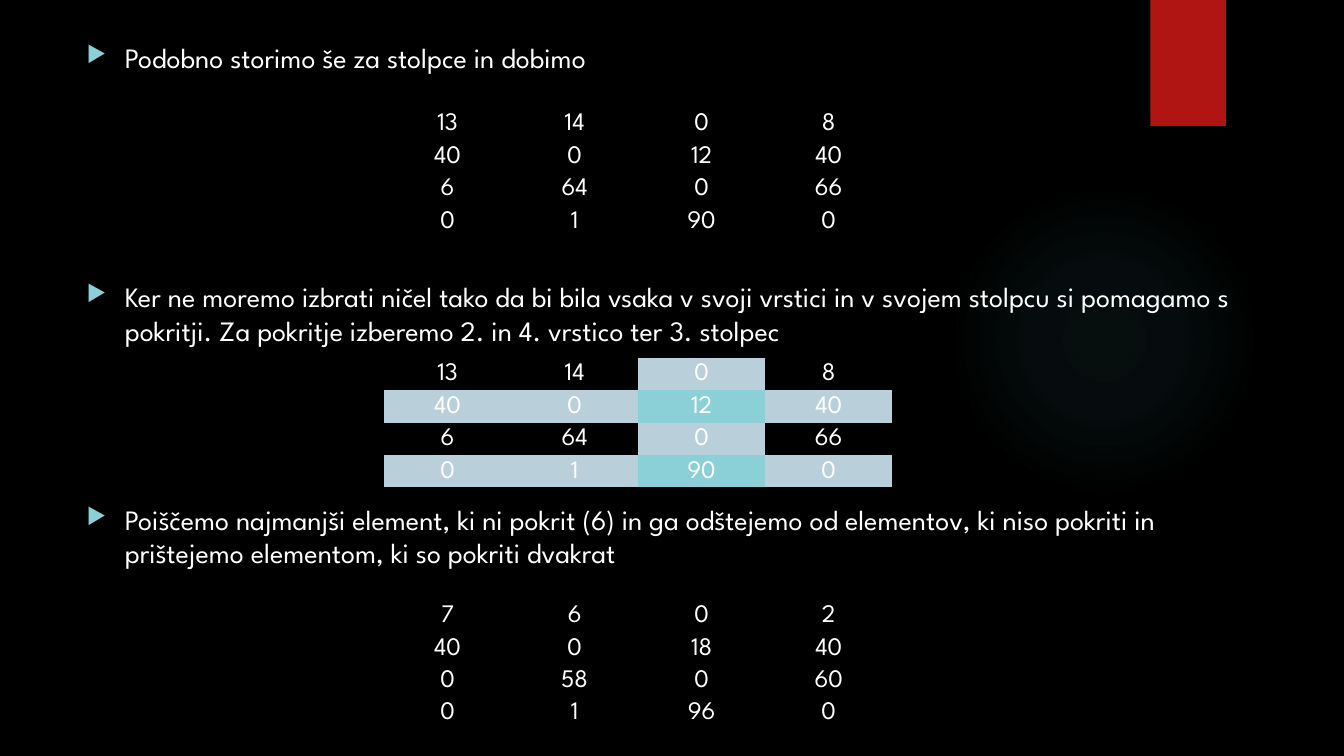
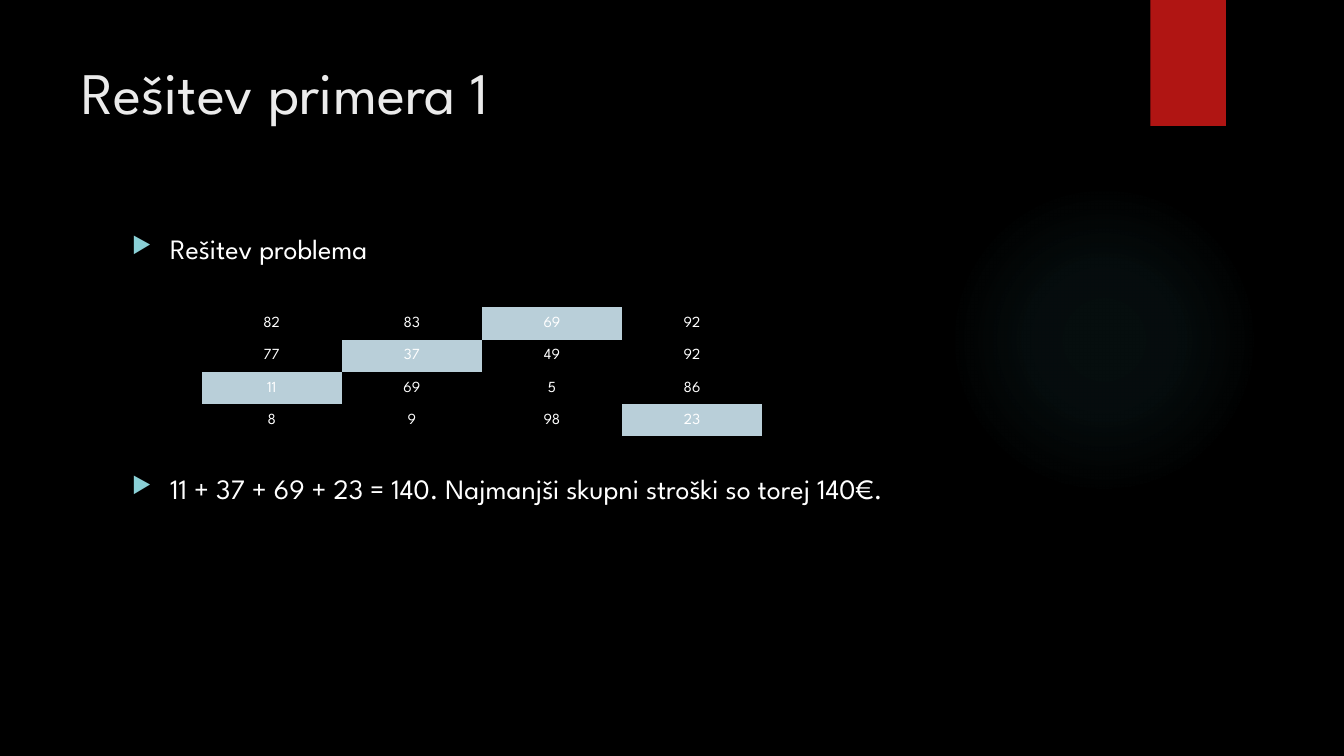
from dataclasses import dataclass

from lxml.etree import SubElement
from pptx import Presentation
from pptx.dml.color import RGBColor
from pptx.enum.shapes import MSO_SHAPE
from pptx.enum.text import MSO_ANCHOR, PP_ALIGN
from pptx.oxml import parse_xml
from pptx.oxml.ns import nsdecls, qn
from pptx.util import Inches, Pt


@dataclass(frozen=True)
class Theme:
    """Colours, font and type sizes shared by the slides."""
    back: str = "000000"
    text: str = "FFFFFF"
    title: str = "EBEBEB"
    tab: str = "B01513"
    glow: str = "50B9C1"
    bullet: str = "8AD0D6"
    marked: str = "B9CFD9"
    crossed: str = "8AD0D6"
    font: str = "League Spartan"
    title_size: int = 42
    body_size: int = 20
    matrix_size: int = 18
    small_size: int = 11


PLAIN_TABLE = "{2D5ABB26-0587-4C30-8999-92F81FD0307C}"
GLOW_STOPS = ((0, 7), (36, 6), (69, 0))  # position and opacity in percent


def apply(target, formats):
    for name, value in formats.items():
        setattr(target, name, value)


class Deck:
    def __init__(self, theme):
        self.theme = theme
        self.prs = Presentation()
        apply(self.prs, {"slide_width": Inches(13.33), "slide_height": Inches(7.5)})
        self.s = None

    def add_slide(self):
        """Start a slide with the dark background, glow and red tab."""
        self.s = self.prs.slides.add_slide(self.prs.slide_layouts[6])
        self.fill(self.s.background.fill, self.theme.back)
        glow = self.shape(MSO_SHAPE.OVAL, 9.41, 1.83, 3.08, 3.08)
        self.radial_fill(glow)
        tab = self.shape(MSO_SHAPE.RECTANGLE, 11.41, 0, 0.75, 1.25)
        self.fill(tab.fill, self.theme.tab)

    def fill(self, fill, color):
        fill.solid()
        fill.fore_color.rgb = RGBColor.from_string(color)

    def shape(self, kind, x, y, w, h):
        sp = self.s.shapes.add_shape(kind, Inches(x), Inches(y), Inches(w), Inches(h))
        sp.shadow.inherit = False
        sp.line.fill.background()
        return sp

    def radial_fill(self, sp):
        stops = "".join(
            f'<a:gs pos="{pos * 1000}"><a:srgbClr val="{self.theme.glow}">'
            f'<a:alpha val="{alpha * 1000}"/></a:srgbClr></a:gs>'
            for pos, alpha in GLOW_STOPS)
        grad = parse_xml(
            f'<a:gradFill {nsdecls("a")}><a:gsLst>{stops}</a:gsLst><a:path path="circle">'
            '<a:fillToRect l="50000" t="50000" r="50000" b="50000"/></a:path></a:gradFill>')
        sp.element.spPr.find(qn("a:prstGeom")).addnext(grad)

    def style(self, font, size, color):
        apply(font, {"name": self.theme.font, "size": Pt(size)})
        font.color.rgb = RGBColor.from_string(color)

    def text_frame(self, x, y, w, h):
        sp = self.s.shapes.add_textbox(Inches(x), Inches(y), Inches(w), Inches(h))
        tf = sp.text_frame
        tf.word_wrap = True
        return tf

    def title(self, text):
        p = self.text_frame(0.71, 0.5, 10.29, 1.53).paragraphs[0]
        r = p.add_run()
        r.text = text
        self.style(r.font, self.theme.title_size, self.theme.title)

    def bullets(self, x, y, w, h, items):
        """Add bulleted paragraphs from (space before in points, text) pairs."""
        tf = self.text_frame(x, y, w, h)
        for i, (gap, text) in enumerate(items):
            p = tf.add_paragraph() if i else tf.paragraphs[0]
            self.bullet_mark(p)
            p.space_before = Pt(gap)
            r = p.add_run()
            r.text = text
            self.style(r.font, self.theme.body_size, self.theme.text)

    def bullet_mark(self, p):
        pPr = p._p.get_or_add_pPr()
        indent = Inches(0.38)
        pPr.set("marL", str(indent))
        pPr.set("indent", str(-indent))
        color = SubElement(pPr, qn("a:buClr"))
        SubElement(color, qn("a:srgbClr"), val=self.theme.bullet)
        SubElement(pPr, qn("a:buSzPct"), val="80000")
        SubElement(pPr, qn("a:buChar"), char="▶")

    def matrix(self, x, y, col_width, row_heights, values, size, fills=None):
        """Add a borderless number grid; fills maps (row, column) to a colour."""
        fills = fills or {}
        rows, cols = len(values), len(values[0])
        frame = self.s.shapes.add_table(
            rows, cols, Inches(x), Inches(y),
            Inches(col_width * cols), Inches(sum(row_heights)))
        table = frame.table
        apply(table, {"first_row": False, "horz_banding": False})
        table._tbl.tblPr.find(qn("a:tableStyleId")).text = PLAIN_TABLE
        for column in table.columns:
            column.width = Inches(col_width)
        for row, height in zip(table.rows, row_heights):
            row.height = Inches(height)
        for i, line in enumerate(values):
            for j, value in enumerate(line):
                self.cell(table.cell(i, j), value, size, fills.get((i, j)))

    def cell(self, cell, value, size, color):
        apply(cell, {
            "vertical_anchor": MSO_ANCHOR.MIDDLE,
            "margin_left": Inches(0.07), "margin_right": Inches(0.07),
            "margin_top": 0, "margin_bottom": 0})
        if color:
            self.fill(cell.fill, color)
        else:
            cell.fill.background()
        p = cell.text_frame.paragraphs[0]
        apply(p, {"alignment": PP_ALIGN.CENTER, "line_spacing": 1.07})
        r = p.add_run()
        r.text = str(value)
        self.style(r.font, size, self.theme.text)


def cover_fills(theme, rows, cols, size=4):
    """Colour covered cells, with a second colour where two covers cross."""
    shades = {1: theme.marked, 2: theme.crossed}
    return {(i, j): shades[(i in rows) + (j in cols)]
            for i in range(size) for j in range(size) if i in rows or j in cols}


def main():
    theme = Theme()
    deck = Deck(theme)

    # Column reduction, cover and adjustment
    reduced = [(13, 14, 0, 8), (40, 0, 12, 40), (6, 64, 0, 66), (0, 1, 90, 0)]
    adjusted = [(7, 6, 0, 2), (40, 0, 18, 40), (0, 58, 0, 60), (0, 1, 96, 0)]
    even = [0.19] * 4
    deck.add_slide()
    deck.bullets(0.76, 0.35, 11.75, 6.39, [
        (0, "Podobno storimo še za stolpce in dobimo"),
        (147, "Ker ne moremo izbrati ničel tako da bi bila vsaka v svoji vrstici in v svojem "
              "stolpcu si pomagamo s pokritji. Za pokritje izberemo 2. in 4. vrstico ter "
              "3. stolpec"),
        (111, "Poiščemo najmanjši element, ki ni pokrit (6) in ga odštejemo od elementov, "
              "ki niso pokriti in prištejemo elementom, ki so pokriti dvakrat"),
    ])
    for y, heights, values, fills in (
            (1.07, [0.11, 0.19, 0.31, 0.19], reduced, None),
            (3.55, even, reduced, cover_fills(theme, rows={1, 3}, cols={2})),
            (5.95, even, adjusted, None)):
        deck.matrix(3.81, y, 1.26, heights, values, theme.matrix_size, fills)

    # Solution with the chosen cells marked
    costs = [(82, 83, 69, 92), (77, 37, 49, 92), (11, 69, 5, 86), (8, 9, 98, 23)]
    chosen = [(0, 2), (1, 1), (2, 0), (3, 3)]
    deck.add_slide()
    deck.title("Rešitev primera 1")
    deck.bullets(1.21, 2.25, 9.78, 4.59, [
        (0, "Rešitev problema"),
        (147, "11 + 37 + 69 + 23 = 140. Najmanjši skupni stroški so torej 140€."),
    ])
    deck.matrix(2, 3.05, 1.39, [0.32] * 4, costs, theme.small_size,
                dict.fromkeys(chosen, theme.marked))

    deck.prs.save("out.pptx")


if __name__ == "__main__":
    main()
